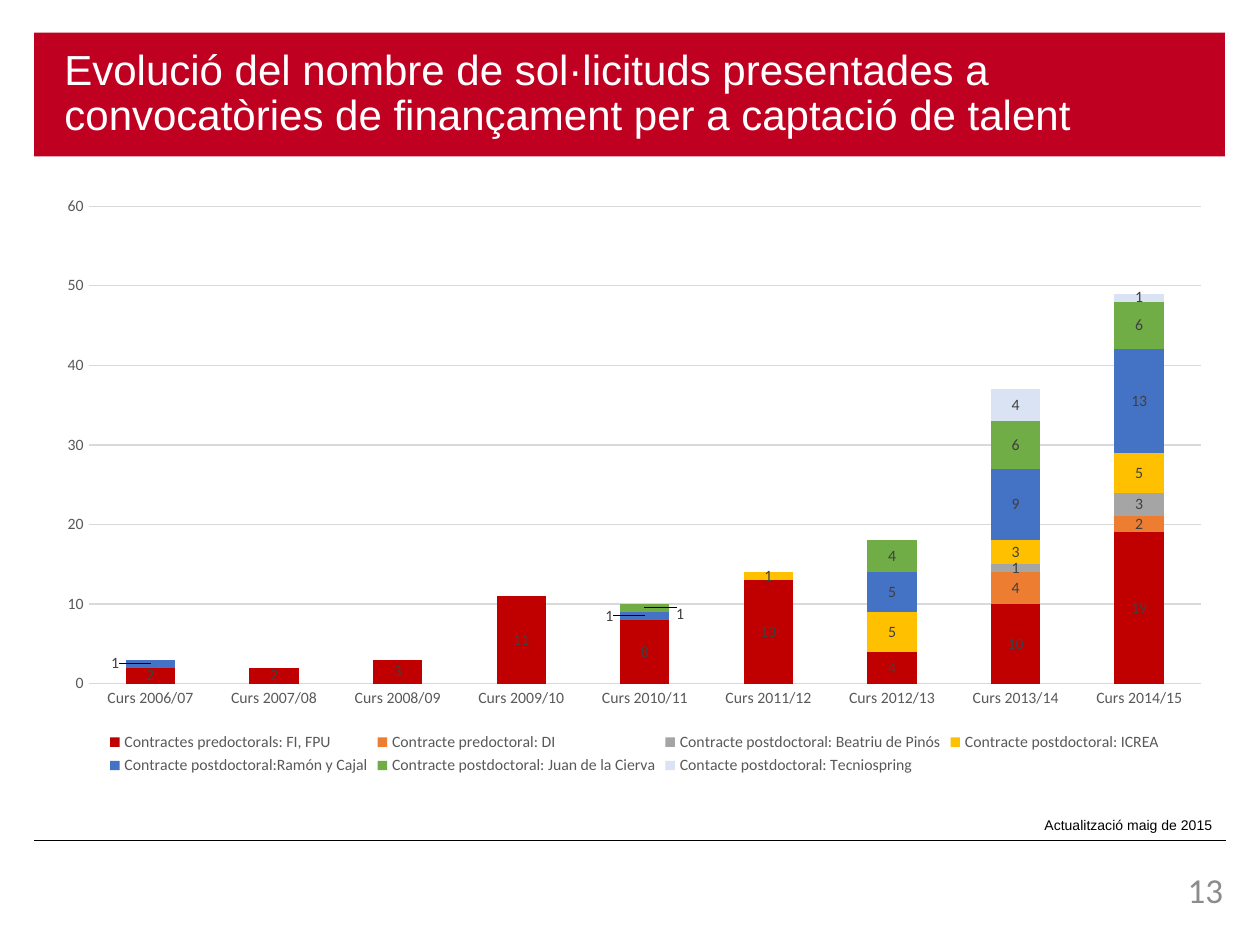
from lxml.etree import SubElement
from pptx import Presentation
from pptx.chart.data import CategoryChartData
from pptx.dml.color import RGBColor
from pptx.enum.chart import XL_CHART_TYPE, XL_LEGEND_POSITION, XL_TICK_MARK
from pptx.enum.shapes import MSO_CONNECTOR, MSO_SHAPE
from pptx.enum.text import MSO_ANCHOR, PP_ALIGN
from pptx.oxml.ns import qn
from pptx.util import Pt


def color(value):
    return RGBColor.from_string(value)


def style(font, name, size, value):
    font.name = name
    font.size = Pt(size)
    font.color.rgb = color(value)


deck = Presentation()
deck.slide_width = Pt(720)
deck.slide_height = Pt(540)
slide = deck.slides.add_slide(deck.slide_layouts[6])

footer_rule = slide.shapes.add_connector(
    MSO_CONNECTOR.STRAIGHT, Pt(19.5), Pt(480.2), Pt(700.5), Pt(480.2))
footer_rule.line.color.rgb = color("000000")
footer_rule.line.width = Pt(0.5)
SubElement(footer_rule._element.spPr, qn("a:effectLst"))

banner = slide.shapes.add_shape(
    MSO_SHAPE.RECTANGLE, Pt(19.5), Pt(18.7), Pt(680.5), Pt(70.6))
banner.shadow.inherit = False
banner.fill.solid()
banner.fill.fore_color.rgb = color("C00021")
banner.line.fill.background()
heading = banner.text_frame
heading.word_wrap = True
heading.vertical_anchor = MSO_ANCHOR.MIDDLE
heading.margin_left = Pt(17.3)
heading.margin_right = Pt(7.2)
heading.margin_top = heading.margin_bottom = Pt(3.6)
heading_line = heading.paragraphs[0]
heading_line.alignment = PP_ALIGN.LEFT
heading_line.line_spacing = 0.9
heading_run = heading_line.add_run()
heading_run.text = (
    "Evolució del nombre de sol·licituds presentades a "
    "convocatòries de finançament per a captació de talent")
style(heading_run.font, "Arial", 24, "FFFFFF")

footer_notes = [
    ("Actualització maig de 2015", 581, 463, 119, 17, 7.2, 3.6, "Arial", 8, "000000"),
    ("13", 646.5, 496, 52.5, 29, 0, 0, "Calibri", 20, "8C8C8C"),
]
for words, left, top, width, height, side, edge, face, size, ink in footer_notes:
    note = slide.shapes.add_textbox(Pt(left), Pt(top), Pt(width), Pt(height)).text_frame
    note.word_wrap = True
    note.margin_left = note.margin_right = Pt(side)
    note.margin_top = note.margin_bottom = Pt(edge)
    note.paragraphs[0].alignment = PP_ALIGN.RIGHT
    note_run = note.paragraphs[0].add_run()
    note_run.text = words
    style(note_run.font, face, size, ink)

contracts = [
    ("Contractes predoctorals: FI, FPU", "C00000", [2, 2, 3, 11, 8, 13, 4, 10, 19]),
    ("Contracte predoctoral: DI", "ED7D31", [None] * 7 + [4, 2]),
    ("Contracte postdoctoral: Beatriu de Pinós", "A5A5A5", [None] * 7 + [1, 3]),
    ("Contracte postdoctoral: ICREA", "FFC000", [None] * 5 + [1, 5, 3, 5]),
    ("Contracte postdoctoral:Ramón y Cajal", "4472C4",
     [1, None, None, None, 1, None, 5, 9, 13]),
    ("Contracte postdoctoral: Juan de la Cierva", "70AD47",
     [None] * 4 + [1, None, 4, 6, 6]),
    ("Contacte postdoctoral: Tecniospring", "DAE3F3", [None] * 7 + [4, 1]),
]
applications = CategoryChartData(number_format="General")
applications.categories = [f"Curs {year}/{year % 100 + 1:02}" for year in range(2006, 2015)]
for contract, fill, counts in contracts:
    applications.add_series(contract, counts)

chart = slide.shapes.add_chart(
    XL_CHART_TYPE.COLUMN_STACKED, Pt(25.2), Pt(105.8), Pt(674.6), Pt(339.8),
    applications).chart
style(chart.font, "Calibri", 10, "000000")
chart.has_title = False
chart.has_legend = True
chart.legend.position = XL_LEGEND_POSITION.BOTTOM
chart.legend.include_in_layout = False
style(chart.legend.font, "Calibri", 9, "595959")

courses = chart.category_axis
counts_axis = chart.value_axis
for axis in (courses, counts_axis):
    axis.major_tick_mark = XL_TICK_MARK.NONE
    axis.minor_tick_mark = XL_TICK_MARK.NONE
    style(axis.tick_labels.font, "Calibri", 9, "595959")
counts_axis.minimum_scale = 0
counts_axis.maximum_scale = 60
counts_axis.major_unit = 10
counts_axis.has_major_gridlines = True
counts_axis.format.line.fill.background()
for rule in (courses.format.line, counts_axis.major_gridlines.format.line):
    rule.color.rgb = color("D9D9D9")
    rule.width = Pt(0.75)

columns = chart.plots[0]
columns.gap_width = 150
columns.overlap = 100
columns.vary_by_categories = False
for series, (contract, fill, counts) in zip(columns.series, contracts):
    series.invert_if_negative = False
    series.format.fill.solid()
    series.format.fill.fore_color.rgb = color(fill)
    series.data_labels.show_value = True
    style(series.data_labels.font, "Calibri", 9, "404040")

labels_beside_column = [(4, 0, -0.03, 0), (4, 4, -0.03, 0), (5, 4, 0.03, 0.01)]
for contract_index, course_index, shift_x, shift_y in labels_beside_column:
    series = columns.series[contract_index]
    style(series.points[course_index].data_label.font, "Calibri", 9, "404040")
    label = series.data_labels._element.findall(qn("c:dLbl"))[-1]
    layout = SubElement(label, qn("c:layout"))
    label.insert(1, layout)
    offset = SubElement(layout, qn("c:manualLayout"))
    SubElement(offset, qn("c:x")).set("val", str(shift_x))
    SubElement(offset, qn("c:y")).set("val", str(shift_y))

deck.save("out.pptx")
